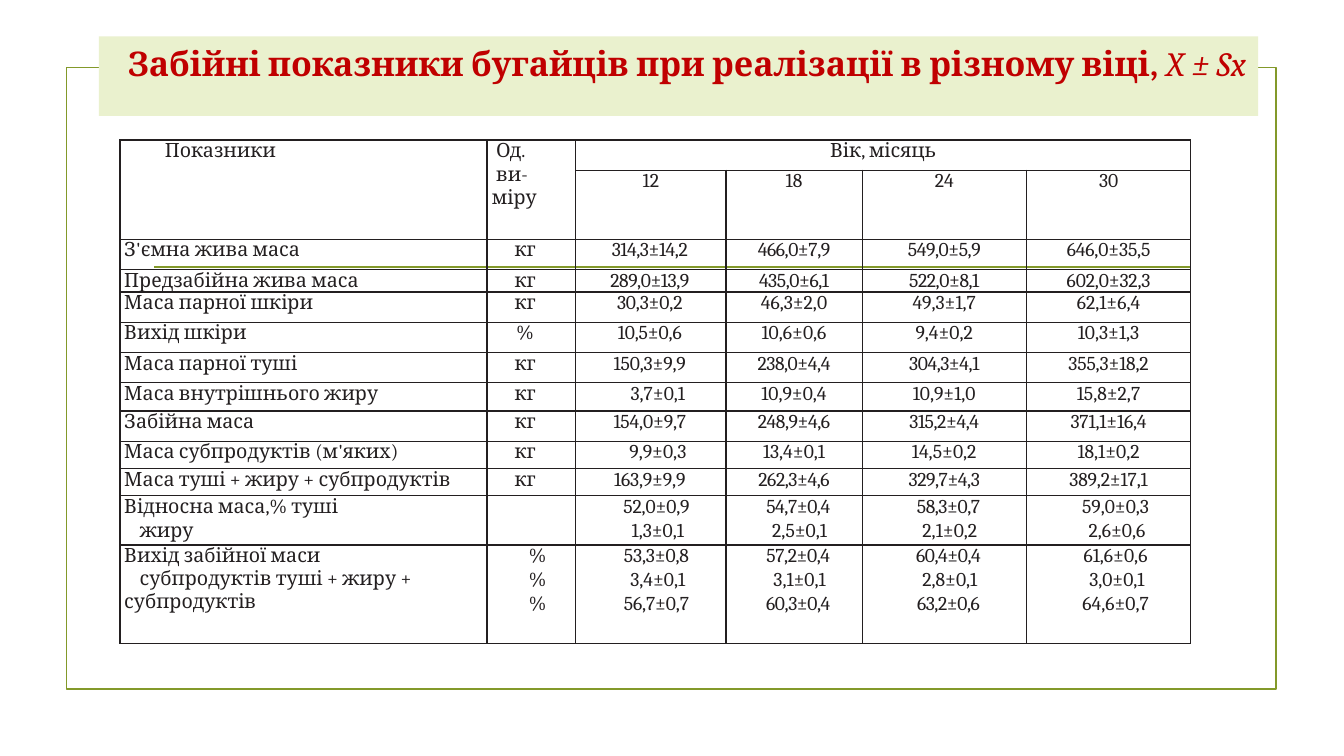
import itertools
from dataclasses import dataclass, field

import pptx
import pptx.dml.color
import pptx.enum.shapes
import pptx.enum.text
import pptx.oxml
import pptx.oxml.ns
import pptx.util
from lxml import etree

RGBColor = pptx.dml.color.RGBColor
ALIGN = pptx.enum.text.PP_ALIGN
ANCHOR = pptx.enum.text.MSO_ANCHOR
qn = pptx.oxml.ns.qn

OLIVE = RGBColor(0x83, 0x99, 0x2A)
PALE_GREEN = RGBColor(0xEA, 0xF1, 0xCE)
RED = RGBColor(0xC0, 0x00, 0x00)
INK = RGBColor(0x23, 0x1F, 0x20)
FONT = "Cambria"

WIDTH = pptx.util.Inches(13.33)
HEIGHT = pptx.util.Inches(7.5)
COL_SHARES = (27.31, 6.6, 11.18, 10.13, 12.23, 12.23)
ROW_SHARES = (4, 5.87, 4, 2.8, 4, 4, 4, 3.73, 4, 3.6, 3.6, 6.53, 13.07)
SHORT_VALUE = 7


@dataclass
class Para:
    text: str
    align: ALIGN = ALIGN.LEFT
    left: float = 0
    first: float = 0
    right: float = 0
    tracking: float = 0


@dataclass
class Age:
    label: str
    left: float
    right: float
    group_left: float
    group_tracking: float
    tracking: dict[int, float] = field(default_factory=dict)


@dataclass
class Indicator:
    name: str
    unit: str
    values: str


@dataclass
class Group:
    names: list[Para]
    units: list[str]
    values: list[str]


AGES = [
    Age("12", 0, 1.5, 8, -0.1, {8: -0.1, 9: -0.1, 10: -0.3}),
    Age("18", 1, 1, 6, -0.3, {9: -0.3}),
    Age("24", 1, 1, 6, -0.3, {9: -0.3}),
    Age("30", 1.5, 1.5, 10, 0, {10: -0.1}),
]

INDICATORS = [
    Indicator("З'ємна жива маса", "кг", "314,3±14,2 466,0±7,9 549,0±5,9 646,0±35,5"),
    Indicator("Предзабійна жива маса", "кг", "289,0±13,9 435,0±6,1 522,0±8,1 602,0±32,3"),
    Indicator("Маса парної шкіри", "кг", "30,3±0,2 46,3±2,0 49,3±1,7 62,1±6,4"),
    Indicator("Вихід шкіри", "%", "10,5±0,6 10,6±0,6 9,4±0,2 10,3±1,3"),
    Indicator("Маса парної туші", "кг", "150,3±9,9 238,0±4,4 304,3±4,1 355,3±18,2"),
    Indicator("Маса внутрішнього жиру", "кг", "3,7±0,1 10,9±0,4 10,9±1,0 15,8±2,7"),
    Indicator("Забійна маса", "кг", "154,0±9,7 248,9±4,6 315,2±4,4 371,1±16,4"),
    Indicator("Маса субпродуктів (м'яких)", "кг", "9,9±0,3 13,4±0,1 14,5±0,2 18,1±0,2"),
    Indicator("Маса туші + жиру + субпродуктів", "кг", "163,9±9,9 262,3±4,6 329,7±4,3 389,2±17,1"),
]

GROUPS = [
    Group([Para("Відносна маса,% туші", left=14, first=-11), Para("жиру", left=14)], [],
          ["52,0±0,9 54,7±0,4 58,3±0,7 59,0±0,3", "1,3±0,1 2,5±0,1 2,1±0,2 2,6±0,6"]),
    Group([Para("Вихід забійної маси субпродуктів туші + жиру +", left=14, first=-11, right=36),
           Para("субпродуктів", left=3)], ["%", "%", "%"],
          ["53,3±0,8 57,2±0,4 60,4±0,4 61,6±0,6", "3,4±0,1 3,1±0,1 2,8±0,1 3,0±0,1",
           "56,7±0,7 60,3±0,4 63,2±0,6 64,6±0,7"]),
]


def across(share: float) -> int:
    return round(WIDTH * share / 100)


def down(share: float) -> int:
    return round(HEIGHT * share / 100)


def add_run(p, text: str, *, size: float = 14, color: RGBColor = INK, bold: bool = False,
            italic: bool = False, tracking: float = 0) -> None:
    r = p.add_run()
    r.text = text
    r.font.name, r.font.size = FONT, pptx.util.Pt(size)
    r.font.bold, r.font.italic = bold, italic
    r.font.color.rgb = color
    if tracking:
        r.font._element.set("spc", str(round(tracking * 100)))


def indent(p, left: float = 0, first: float = 0, right: float = 0) -> None:
    pPr = p._p.get_or_add_pPr()
    for name, points in (("marL", left), ("marR", right), ("indent", first)):
        pPr.set(name, str(int(pptx.util.Pt(points))))


def fill_cell(cell, paras: list[Para]) -> None:
    tf = cell.text_frame
    for i, para in enumerate(paras):
        p = tf.add_paragraph() if i else tf.paragraphs[0]
        indent(p, para.left, para.first, para.right)
        p.alignment = para.align
        if i:
            p.space_before = pptx.util.Pt(0.9)
        add_run(p, para.text, tracking=para.tracking)


def format_cell(cell) -> None:
    cell.margin_left = cell.margin_right = cell.margin_top = cell.margin_bottom = 0
    tcPr = cell._tc.get_or_add_tcPr()
    for side in ("a:lnL", "a:lnR", "a:lnT", "a:lnB"):
        ln = etree.SubElement(tcPr, qn(side), w=str(int(pptx.util.Pt(1))))
        solid = etree.SubElement(ln, qn("a:solidFill"))
        etree.SubElement(solid, qn("a:srgbClr"), val=str(INK))
    cell.fill.background()


def value_para(age: Age, text: str, grouped: bool) -> Para:
    if len(text) == SHORT_VALUE and (grouped or age is AGES[0]):
        return Para(text, ALIGN.CENTER, age.group_left + 2)
    if grouped:
        return Para(text, ALIGN.CENTER, age.group_left, tracking=age.group_tracking)
    return Para(text, ALIGN.CENTER, age.left, right=age.right,
                tracking=age.tracking.get(len(text), 0))


def add_frame(s, title) -> None:
    frame = s.shapes.add_shape(pptx.enum.shapes.MSO_SHAPE.RECTANGLE,
                               across(4.95), down(8.93), across(90.02), down(82.27))
    frame.shadow.inherit = False
    frame.fill.background()
    rule = s.shapes.add_connector(pptx.enum.shapes.MSO_CONNECTOR.STRAIGHT,
                                  across(11.48), down(35.33), across(88.6), down(35.33))
    etree.SubElement(rule._element.spPr, qn("a:effectLst"))
    for sp in (frame, rule):
        sp.line.color.rgb = OLIVE
        sp.line.width = pptx.util.Pt(1.25)
        title._element.addprevious(sp._element)


def format_title(title) -> None:
    title.left, title.top = across(7.35), down(4.8)
    title.width, title.height = across(86.27), down(10.53)
    title.fill.solid()
    title.fill.fore_color.rgb = PALE_GREEN
    tf = title.text_frame
    tf.word_wrap = True
    tf.auto_size = pptx.enum.text.MSO_AUTO_SIZE.NONE
    tf.vertical_anchor = ANCHOR.MIDDLE
    tf.margin_left = tf.margin_right = tf.margin_top = 0
    tf.margin_bottom = down(3.6)
    p = tf.paragraphs[0]
    indent(p, left=12)
    p.alignment = ALIGN.CENTER
    add_run(p, "Забійні показники бугайців при реалізації в різному віці, ",
            size=24.3, color=RED, bold=True)
    add_run(p, "X ± Sx", size=24.3, color=RED, italic=True)


def add_indicator_table(s) -> None:
    table = s.shapes.add_table(len(ROW_SHARES), len(COL_SHARES), across(8.93), down(18.53),
                               across(sum(COL_SHARES)), down(sum(ROW_SHARES))).table
    table.first_row = table.horz_banding = False
    for column, share in zip(table.columns, COL_SHARES):
        column.width = across(share)
    for row, share in zip(table.rows, ROW_SHARES):
        row.height = down(share)
    for i, j in itertools.product(range(len(ROW_SHARES)), range(len(COL_SHARES))):
        format_cell(table.cell(i, j))
    for j in (0, 1):
        table.cell(0, j).merge(table.cell(1, j))
    table.cell(0, 2).merge(table.cell(0, 5))

    fill_cell(table.cell(0, 0), [Para("Показники", left=32)])
    fill_cell(table.cell(0, 1), [Para("Од.", left=6.5),
                                 Para("ви- міру", left=3.5, first=3, right=14)])
    fill_cell(table.cell(0, 2), [Para("Вік, місяць", ALIGN.CENTER)])
    for j, age in enumerate(AGES, 2):
        fill_cell(table.cell(1, j), [Para(age.label, ALIGN.CENTER)])

    for i, item in enumerate(INDICATORS, 2):
        fill_cell(table.cell(i, 0), [Para(item.name, left=3)])
        fill_cell(table.cell(i, 1), [Para(item.unit, ALIGN.CENTER, right=9)])
        for j, (age, text) in enumerate(zip(AGES, item.values.split()), 2):
            fill_cell(table.cell(i, j), [value_para(age, text, False)])

    for i, group in enumerate(GROUPS, 2 + len(INDICATORS)):
        fill_cell(table.cell(i, 0), group.names)
        fill_cell(table.cell(i, 1), [Para(unit, ALIGN.CENTER, 9) for unit in group.units])
        by_age = zip(*(line.split() for line in group.values))
        for j, (age, texts) in enumerate(zip(AGES, by_age), 2):
            fill_cell(table.cell(i, j), [value_para(age, text, True) for text in texts])


def main() -> None:
    prs = pptx.Presentation()
    prs.slide_width, prs.slide_height = WIDTH, HEIGHT
    s = prs.slides.add_slide(prs.slide_layouts[5])
    title = s.shapes.title
    add_frame(s, title)
    format_title(title)
    add_indicator_table(s)
    prs.save("out.pptx")


if __name__ == "__main__":
    main()
